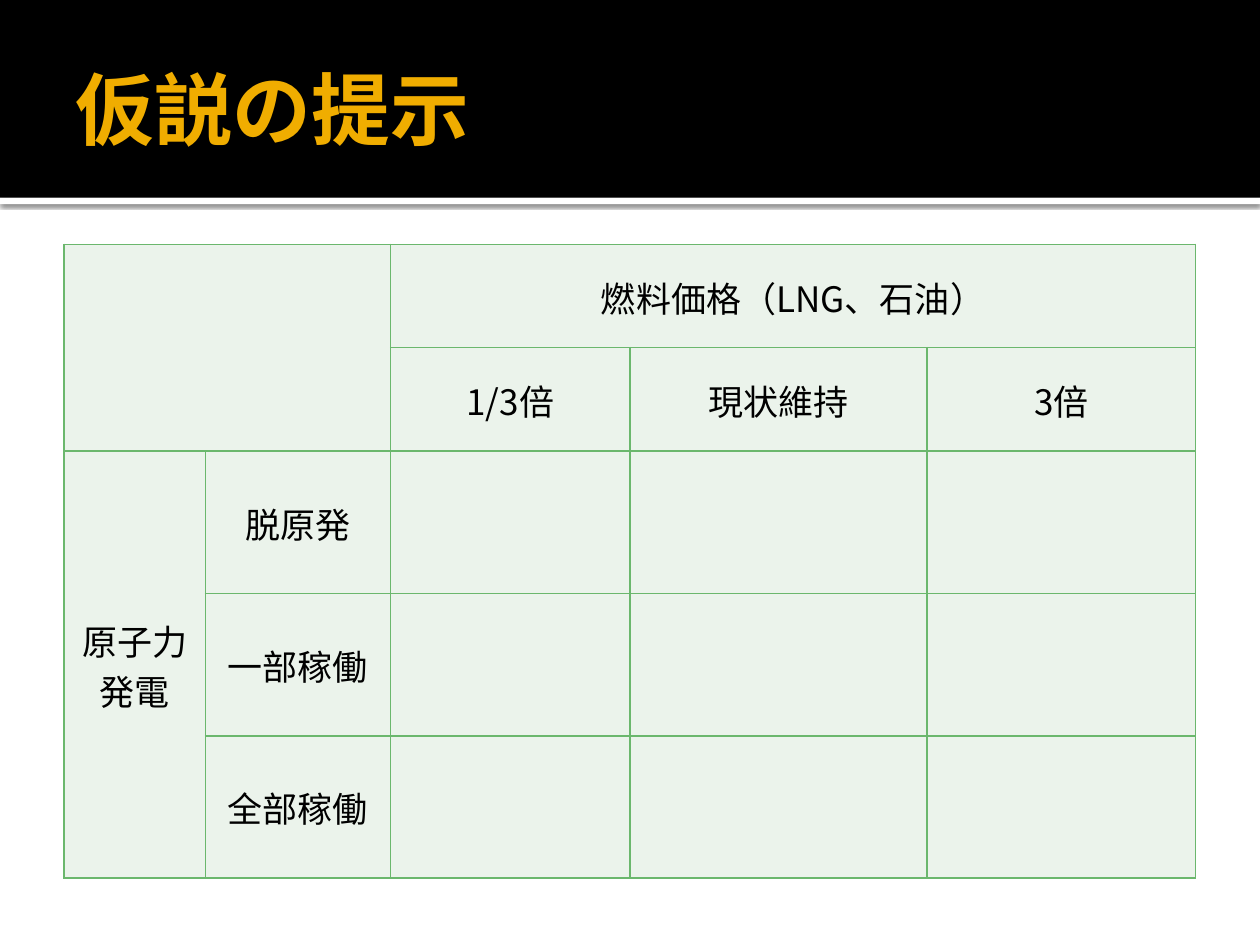
from lxml.etree import SubElement
from pptx import Presentation
from pptx.dml.color import RGBColor
from pptx.enum.shapes import MSO_SHAPE as Shape
from pptx.enum.text import MSO_ANCHOR as Anchor, PP_ALIGN as Align
from pptx.oxml import parse_xml
from pptx.oxml.ns import nsdecls, qn
from pptx.util import Inches, Pt

TITLE = "仮説の提示"
COLUMN_WIDTHS = [1.12, 1.47, 1.9, 2.36, 2.13]
ROW_HEIGHTS = [0.82, 0.82, 1.13, 1.13, 1.13]
ROWS = [
    ["", "", "燃料価格（LNG、石油）", "", ""],
    ["", "", "1/3倍", "現状維持", "3倍"],
    ["原子力発電", "脱原発", "", "", ""],
    ["", "一部稼働", "", "", ""],
    ["", "全部稼働", "", "", ""],
]
MERGES = [((0, 0), (1, 1)), ((0, 2), (0, 4)), ((2, 0), (4, 0))]
BLACK, WHITE, GOLD = "000000", "FFFFFF", "F0AD00"
CELL_FILL, BORDER = "EBF3EB", "6BB76D"


def color(value):
    """Turn a hex string into a colour."""
    return RGBColor.from_string(value)


def add_band(slide, top, height, fill):
    """Add a full-width rectangle without outline or shadow."""
    band = slide.shapes.add_shape(Shape.RECTANGLE, 0, Inches(top), Inches(10), Inches(height))
    band.shadow.inherit = False
    band.fill.solid()
    band.fill.fore_color.rgb = color(fill)
    band.line.fill.background()
    return band


def add_shadow(shape):
    """Give a shape a soft shadow straight below it."""
    effects = shape._element.spPr.find(qn("a:effectLst"))
    effects.append(parse_xml(
        f'<a:outerShdw {nsdecls("a")} blurRad="{Pt(2.5)}" dist="{Pt(0.8)}" dir="5400000">'
        f'<a:srgbClr val="{BLACK}"><a:alpha val="60000"/></a:srgbClr></a:outerShdw>'))


def style_text(paragraph, text, font, size, value, bold=False):
    """Write one paragraph in a single font."""
    paragraph.text = text
    paragraph.font.name = font
    paragraph.font.size = Pt(size)
    paragraph.font.bold = bold
    paragraph.font.color.rgb = color(value)


def add_title(slide):
    """Add the slide title over the dark band."""
    box = slide.shapes.add_textbox(Inches(0.5), Inches(0.17), Inches(9), Inches(1.37))
    frame = box.text_frame
    frame.word_wrap = True
    frame.vertical_anchor = Anchor.MIDDLE
    frame.margin_right = Inches(0.05)
    style_text(frame.paragraphs[0], TITLE, "Cabin", 45, GOLD, True)


def style_cell(cell, text):
    """Set borders, fill and centred text of a table cell."""
    properties = cell._tc.get_or_add_tcPr()
    for side in ("lnL", "lnR", "lnT", "lnB"):
        line = SubElement(properties, qn(f"a:{side}"), w=str(Pt(1)))
        fill = SubElement(line, qn("a:solidFill"))
        SubElement(fill, qn("a:srgbClr"), val=BORDER)
    cell.fill.solid()
    cell.fill.fore_color.rgb = color(CELL_FILL)
    cell.vertical_anchor = Anchor.MIDDLE
    cell.margin_left = cell.margin_right = cell.margin_top = Inches(0.01)
    cell.margin_bottom = 0
    if text:
        paragraph = cell.text_frame.paragraphs[0]
        style_text(paragraph, text, "Noto Sans CJK JP", 20, BLACK)
        paragraph.alignment = Align.CENTER


def add_scenario_table(slide):
    """Add the grid of fuel prices against nuclear power."""
    table = slide.shapes.add_table(
        len(ROWS), len(COLUMN_WIDTHS), Inches(0.51), Inches(1.94),
        Inches(sum(COLUMN_WIDTHS)), Inches(sum(ROW_HEIGHTS))).table
    table.first_row = table.horz_banding = False
    for column, width in zip(table.columns, COLUMN_WIDTHS):
        column.width = Inches(width)
    for row, height, texts in zip(table.rows, ROW_HEIGHTS, ROWS):
        row.height = Inches(height)
        for cell, text in zip(row.cells, texts):
            style_cell(cell, text)
    for first, last in MERGES:
        table.cell(*first).merge(table.cell(*last))
    table.cell(2, 0)._tc.tcPr.set("vert", "eaVert")


def main():
    """Build and save the slide."""
    presentation = Presentation()
    presentation.slide_width, presentation.slide_height = Inches(10), Inches(7.5)
    slide = presentation.slides.add_slide(presentation.slide_layouts[6])
    add_shadow(add_band(slide, 1.57, 0.05, WHITE))
    add_band(slide, 0, 1.57, BLACK)
    add_title(slide)
    add_scenario_table(slide)
    presentation.save("out.pptx")


if __name__ == "__main__":
    main()
